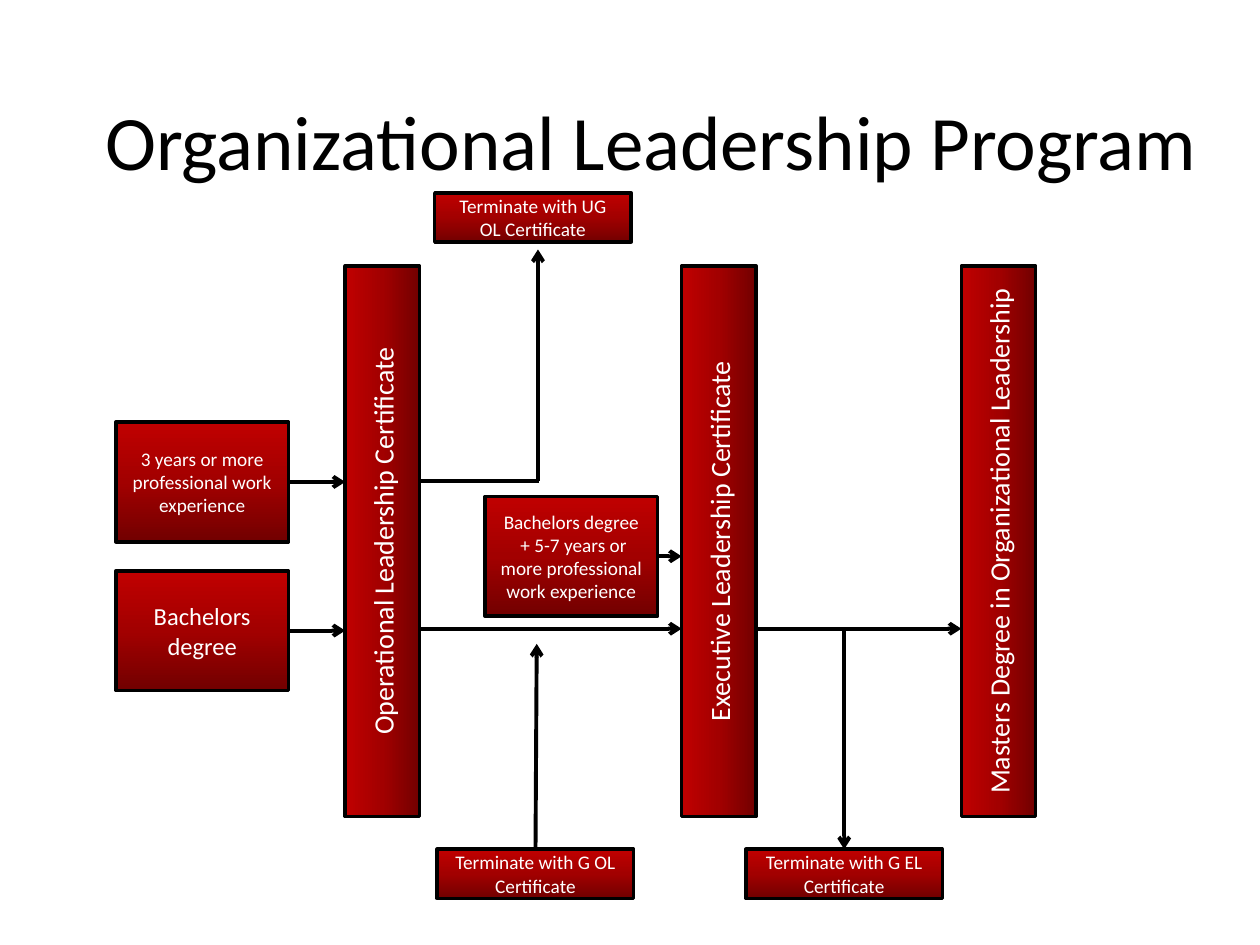
"""Build the Organizational Leadership Program flow slide."""
from copy import deepcopy

from lxml import etree
from pptx import Presentation
from pptx.dml.color import RGBColor
from pptx.enum.shapes import MSO_CONNECTOR, MSO_SHAPE
from pptx.enum.text import MSO_ANCHOR, PP_ALIGN
from pptx.oxml.ns import qn
from pptx.util import Inches, Pt

RECT = MSO_SHAPE.RECTANGLE
LINE = MSO_CONNECTOR.STRAIGHT
MIDDLE = MSO_ANCHOR.MIDDLE
CENTER = PP_ALIGN.CENTER
TOP, RIGHT = 0, 3

HUES = {"dark": "720000", "mid": "A20000", "red": "C00000",
        "ink": "000000", "text": "FFFFFF"}
STOPS = (("dark", 0), ("mid", 0.5), ("red", 1))
BAR, STEP, EXIT = (4.37, 0.59), (1.37, 0.95), (1.56, 0.39)
FLOW = 4.99


def hue(name):
    """Return the named colour."""
    return RGBColor.from_string(HUES[name])


def write(frame, text, size, color):
    """Fill a text frame with centred paragraphs."""
    frame.text = text
    frame.word_wrap = True
    frame.vertical_anchor = MIDDLE
    for para in frame.paragraphs:
        para.alignment = CENTER
        for key, value in {"name": "Calibri", "size": Pt(size)}.items():
            setattr(para.font, key, value)
        para.font.color.rgb = hue(color)


def shade(fill):
    """Apply the red gradient, brightest at the top."""
    fill.gradient()
    fill.gradient_angle = 90


def add_box(slide, text, spot, dims, size=11, turn=0):
    """Add a shaded, outlined box with text."""
    box = slide.shapes.add_shape(RECT, *map(Inches, spot + dims))
    box.rotation = turn
    box.shadow.inherit = False
    shade(box.fill)
    stops = box._element.spPr.find(qn("a:gradFill")).find(qn("a:gsLst"))
    stops.insert(1, deepcopy(stops[0]))
    for stop, (name, place) in zip(box.fill.gradient_stops, STOPS):
        stop.color.rgb = hue(name)
        stop.position = place
    box.line.color.rgb = hue("ink")
    box.line.width = Pt(2)
    write(box.text_frame, text, size, "text")
    return box


def add_line(slide, start, end, arrow=True):
    """Add a straight line, with an arrowhead by default."""
    ends = [Inches(n) for n in start + end]
    link = slide.shapes.add_connector(LINE, *ends)
    link.line.color.rgb = hue("ink")
    link.line.width = Pt(2.25)
    if arrow:
        outline = link.line._get_or_add_ln()
        etree.SubElement(outline, qn("a:tailEnd"), type="arrow")
    etree.SubElement(link._element.spPr, qn("a:effectLst"))
    return link


def add_feed(slide, box, edge):
    """Draw a level arrow from a box's right side to a bar's edge."""
    y = (box.top + box.height / 2) / Inches(1)
    link = add_line(slide, (edge, y), (edge, y))
    link.begin_connect(box, RIGHT)


def main():
    """Build and save the slide."""
    deck = Presentation()
    deck.slide_width, deck.slide_height = Inches(10), Inches(7.5)
    slide = deck.slides.add_slide(deck.slide_layouts[5])

    title = slide.shapes.title
    place = {"left": 0.67, "top": 0.67, "width": 9, "height": 0.87}
    for key, value in place.items():
        setattr(title, key, Inches(value))
    write(title.text_frame, "Organizational Leadership Program", 44, "ink")

    for text, left in (
            ("Operational Leadership Certificate", 0.85),
            ("Executive Leadership Certificate", 3.52),
            ("Masters Degree in Organizational Leadership", 5.74)):
        add_box(slide, text, (left, 4), BAR, 16, 270)

    for text, spot, size, edge in (
            ("3 years or more professional work experience",
             (0.92, 3.35), 11, 2.74),
            ("Bachelors degree", (0.92, 4.53), 14, 2.74),
            ("Bachelors degree\n + 5-7 years or more professional "
             "work experience", (3.85, 3.94), 11, 5.41)):
        add_feed(slide, add_box(slide, text, spot, STEP, size), edge)

    add_box(slide, "Terminate with UG OL Certificate", (3.45, 1.53), EXIT)
    low = add_box(slide, "Terminate with G OL Certificate",
                  (3.47, 6.74), EXIT)
    last = add_box(slide, "Terminate with G EL Certificate",
                   (5.92, 6.74), EXIT)

    add_line(slide, (3.33, 3.82), (4.28, 3.82), arrow=False)
    add_line(slide, (4.27, 3.82), (4.27, 1.98))
    add_line(slide, (3.33, FLOW), (5.41, FLOW))
    add_line(slide, (6, FLOW), (7.63, FLOW))
    add_line(slide, (4.26, 6.74), (4.26, 5.11)).begin_connect(low, TOP)
    add_line(slide, (6.7, FLOW), (6.7, 6.74)).end_connect(last, TOP)

    deck.save("out.pptx")


if __name__ == "__main__":
    main()
